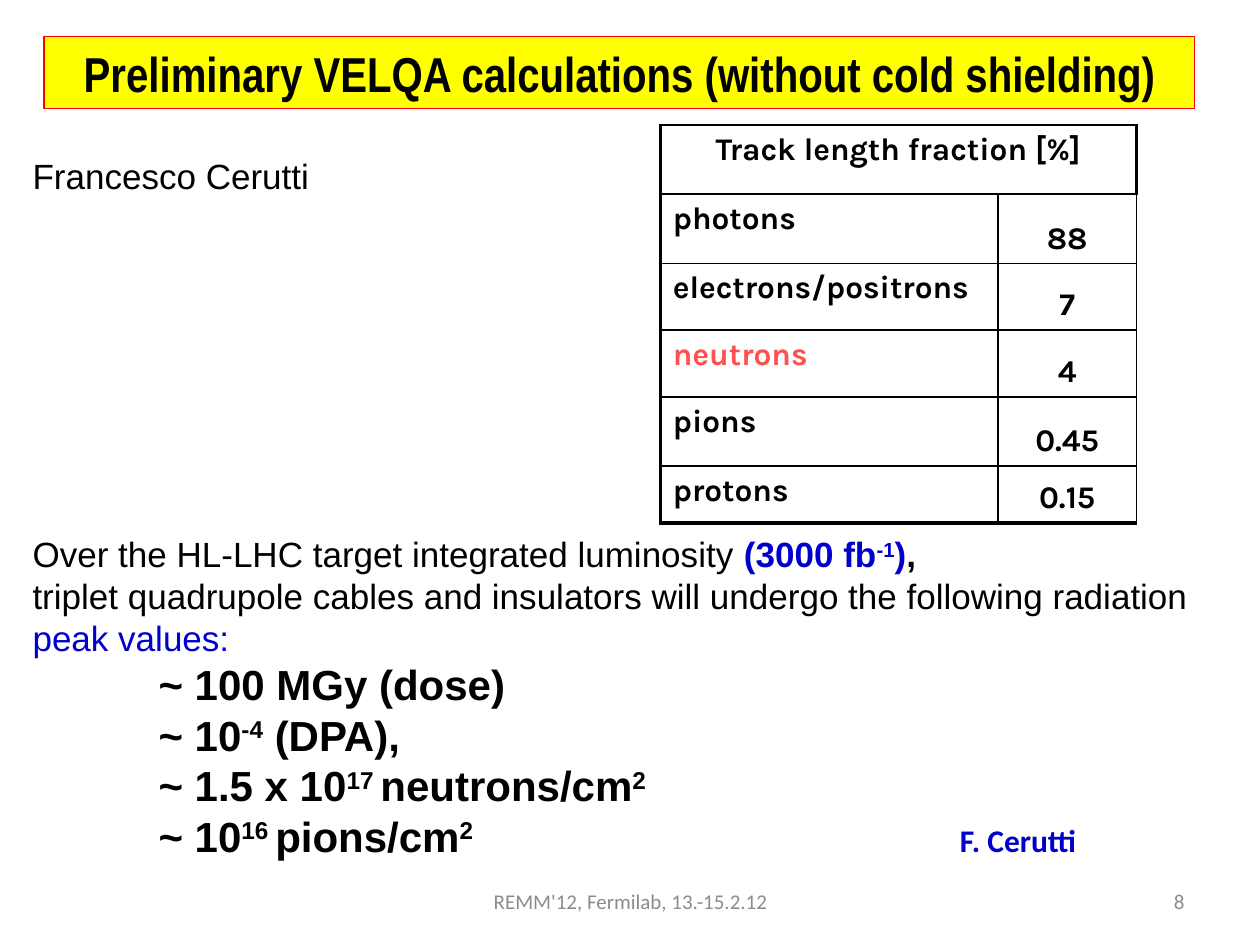
"""Build the slide on preliminary radiation calculations."""
from dataclasses import dataclass

from lxml import etree
from pptx import Presentation
from pptx.dml.color import RGBColor
from pptx.enum.text import MSO_ANCHOR, MSO_AUTO_SIZE, PP_ALIGN
from pptx.oxml.ns import qn
from pptx.util import Emu, Pt

PX = 9144
BLACK = RGBColor(0x00, 0x00, 0x00)
BLUE = RGBColor(0x00, 0x00, 0xCC)
CORAL = RGBColor(0xFF, 0x50, 0x50)
GREY = RGBColor(0x8C, 0x8C, 0x8C)
RED = RGBColor(0xFF, 0x00, 0x00)
YELLOW = RGBColor(0xFF, 0xFF, 0x00)
LEFT, CENTER, RIGHT = PP_ALIGN.LEFT, PP_ALIGN.CENTER, PP_ALIGN.RIGHT
TOP, MIDDLE, BOTTOM = MSO_ANCHOR.TOP, MSO_ANCHOR.MIDDLE, MSO_ANCHOR.BOTTOM
NO_AUTOFIT = MSO_AUTO_SIZE.NONE
THIN, THICK = 1, 2.25


@dataclass(frozen=True)
class Span:
    """A run of text and its look."""
    text: str
    size: int = 20
    bold: bool = False
    color: RGBColor = BLACK
    font: str = "Arial"
    raised: bool = False


@dataclass(frozen=True)
class Para:
    """A paragraph with its spacing in points."""
    spans: list[Span]
    pitch: float | None = None
    before: float = 0
    align: PP_ALIGN = LEFT
    tabs: tuple[int, ...] = ()


@dataclass(frozen=True)
class Particle:
    """A table row: particle type and its track length share."""
    name: str
    share: str
    height: int
    color: RGBColor = BLACK


def px(value: int) -> Emu:
    """Turn hundredths of an inch into EMU."""
    return Emu(value * PX)


def write(frame, paras: list[Para], anchor=TOP) -> None:
    """Fill a text frame with paragraphs, run by run."""
    frame.word_wrap = True
    frame.auto_size = NO_AUTOFIT
    frame.vertical_anchor = anchor
    for index, para in enumerate(paras):
        add_para(frame.add_paragraph() if index else frame.paragraphs[0], para)


def add_para(target, para: Para) -> None:
    """Format one paragraph and add its runs."""
    target.alignment = para.align
    target.space_before = Pt(para.before)
    if para.pitch:
        target.line_spacing = Pt(para.pitch)
    if para.tabs:
        stops = etree.SubElement(target._p.get_or_add_pPr(), qn("a:tabLst"))
        for position in para.tabs:
            etree.SubElement(stops, qn("a:tab"), pos=str(px(position)), algn="l")
    for span in para.spans:
        run = target.add_run()
        run.text = span.text
        run.font.size = Pt(span.size)
        run.font.bold = span.bold
        run.font.name = span.font
        run.font.color.rgb = span.color
        if span.raised:
            run._r.get_or_add_rPr().set("baseline", "30000")


def add_text(slide, left: int, top: int, width: int, height: int,
             paras: list[Para], anchor=TOP) -> None:
    """Add a text box."""
    box = slide.shapes.add_textbox(px(left), px(top), px(width), px(height))
    write(box.text_frame, paras, anchor)


def add_title(slide, text: str) -> None:
    """Place the title in a yellow band with a red outline."""
    title = slide.shapes.title
    title.left, title.top, title.width, title.height = map(px, (35, 29, 913, 57))
    title.fill.solid()
    title.fill.fore_color.rgb = YELLOW
    title.line.color.rgb = RED
    title.line.width = Pt(0.75)
    span = Span(text, 28, True, font="Arial Narrow")
    write(title.text_frame, [Para([span], align=CENTER)], MIDDLE)


def set_borders(cell, **weights: float) -> None:
    """Draw black cell borders, given in schema order L, R, T, B."""
    properties = cell._tc.get_or_add_tcPr()
    for index, (side, weight) in enumerate(weights.items()):
        line = etree.Element(qn(f"a:ln{side}"), w=str(Pt(weight)))
        fill = etree.SubElement(line, qn("a:solidFill"))
        etree.SubElement(fill, qn("a:srgbClr"), val=str(BLACK))
        properties.insert(index, line)


def write_cell(cell, text: str, align=LEFT, anchor=TOP, color=BLACK) -> None:
    """Write bold text into a table cell."""
    cell.vertical_anchor = anchor
    add_para(cell.text_frame.paragraphs[0],
             Para([Span(text, 18, True, color, "Karla")], align=align))


def add_particle_table(slide, heading: str, particles: list[Particle]) -> None:
    """Add the table of track length fractions."""
    heights = [55] + [particle.height for particle in particles]
    table = slide.shapes.add_table(len(heights), 2, px(524), px(99),
                                   px(378), px(sum(heights))).table
    table.first_row = table.horz_banding = False
    for column, width in zip(table.columns, (268, 110)):
        column.width = px(width)
    last = len(particles)
    for row, height in enumerate(heights):
        table.rows[row].height = px(height)
        for column in range(2):
            cell = table.cell(row, column)
            cell.fill.background()
            set_borders(cell, L=THIN if column and row else THICK,
                        R=THIN if row else THICK, T=THIN,
                        B=THICK if row == last else THIN)
    table.cell(0, 0).merge(table.cell(0, 1))
    write_cell(table.cell(0, 0), heading, CENTER)
    for row, particle in enumerate(particles, 1):
        write_cell(table.cell(row, 0), particle.name, color=particle.color)
        write_cell(table.cell(row, 1), particle.share, CENTER, BOTTOM)


def peak(*texts: str, credit: tuple[Span, ...] = ()) -> Para:
    """Make a bold indented line whose every second text is raised."""
    spans = [Span(text, 24, True, raised=index % 2 == 1)
             for index, text in enumerate(texts)]
    return Para([Span("\t", 24), *spans, *credit], 28.8, tabs=(100, 736))


def main() -> None:
    """Build and save the deck."""
    deck = Presentation()
    deck.slide_width, deck.slide_height = px(1000), px(750)
    slide = deck.slides.add_slide(deck.slide_layouts[5])
    add_title(slide, "Preliminary VELQA calculations (without cold shielding)")
    add_text(slide, 16, 118, 965, 616, [
        Para([Span("Francesco Cerutti")], 24),
        Para([Span("Over the HL-LHC target integrated luminosity "),
              Span("(3000 fb", bold=True, color=BLUE),
              Span("-1", bold=True, color=BLUE, raised=True),
              Span(")", bold=True, color=BLUE),
              Span(",", bold=True)], 24, before=192),
        Para([Span("triplet quadrupole cables and insulators will undergo "
                   "the following radiation "),
              Span("peak values:", color=BLUE)], 24),
        peak("~ 100 MGy (dose)"),
        peak("~ 10", "-4", " (DPA),"),
        peak("~ 1.5 x 10", "17 ", "neutrons/cm", "2"),
        peak("~ 10", "16 ", "pions/cm", "2",
             credit=(Span("\tF. Cerutti", 18, True, BLUE, "Calibri"),)),
    ])
    add_particle_table(slide, "Track length fraction [%]", [
        Particle("photons", "88", 55),
        Particle("electrons/positrons", "7", 53),
        Particle("neutrons", "4", 53, CORAL),
        Particle("pions", "0.45", 55),
        Particle("protons", "0.15", 45),
    ])
    for text, left, width, align in (
            ("REMM'12, Fermilab, 13.-15.2.12", 342, 317, CENTER),
            ("8", 717, 233, RIGHT)):
        span = Span(text, 12, color=GREY, font="Calibri")
        add_text(slide, left, 695, width, 40, [Para([span], align=align)], MIDDLE)
    deck.save("out.pptx")


if __name__ == "__main__":
    main()
